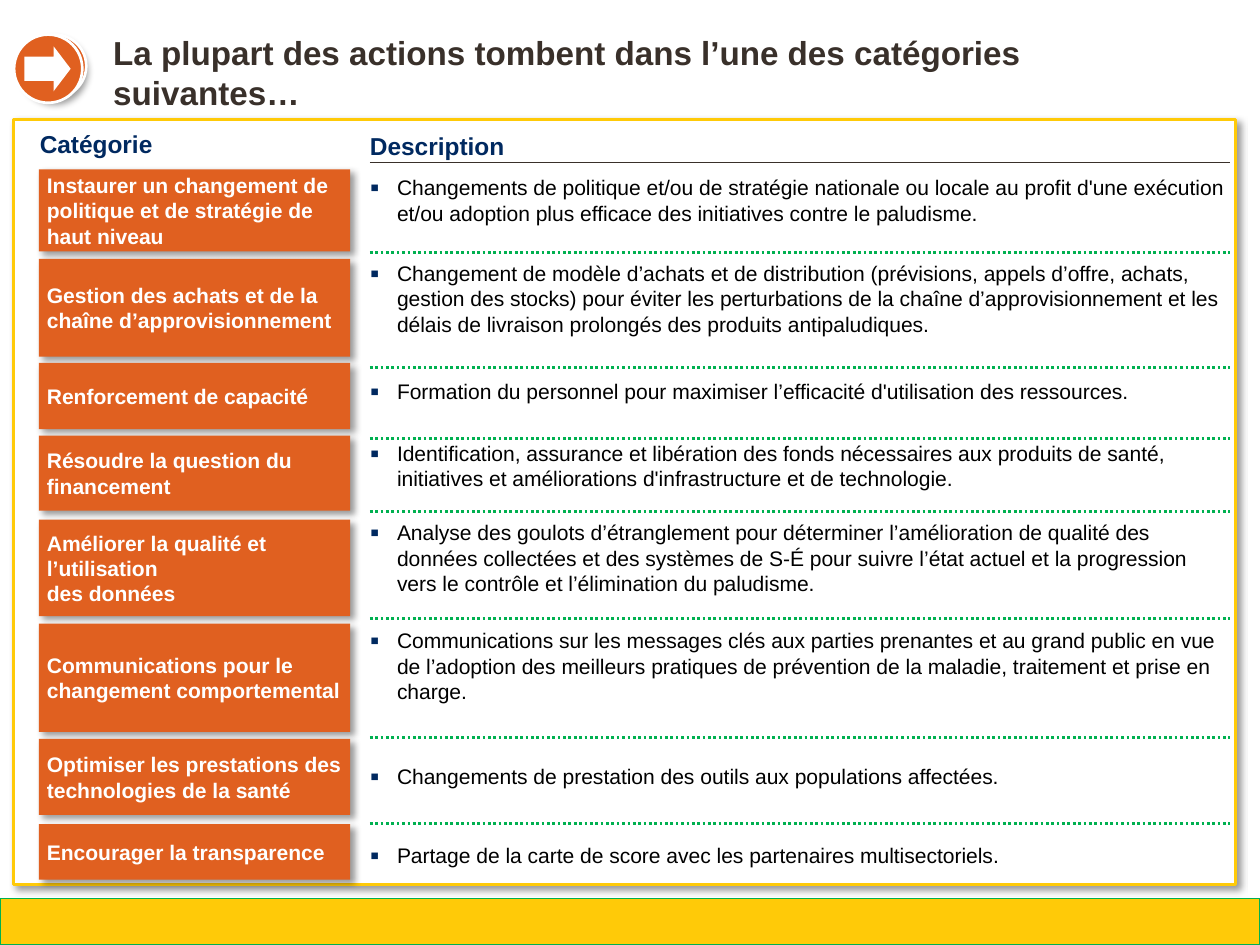
from lxml.etree import SubElement
from pptx import Presentation
from pptx.dml.color import RGBColor
from pptx.enum.dml import MSO_LINE
from pptx.enum.shapes import MSO_CONNECTOR, MSO_SHAPE
from pptx.enum.text import MSO_ANCHOR as Anchor, MSO_AUTO_SIZE as AutoSize, PP_ALIGN
from pptx.oxml.ns import qn
from pptx.util import Pt

ORANGE, YELLOW, GREEN = "E06020", "FFCA08", "00B050"
NAVY, BROWN, WHITE, BLACK = "002960", "39302A", "FFFFFF", "000000"
WIDTH, HEIGHT = 705.6, 529.2
LABEL_LEFT, LABEL_WIDTH = 21.8, 174.4
TEXT_LEFT, TEXT_WIDTH = 207.2, 481.8
BODY_SIZE, HEADING_SIZE, TITLE_SIZE = 11.8, 13.7, 18.6
LINE_RATIO = 1.2

# label, label top, label height, description, description top, rule below
ROWS = [
    ("Instaurer un changement de politique et de stratégie de haut niveau", 94.8, 46,
     "Changements de politique et/ou de stratégie nationale ou locale au profit d'une exécution "
     "et/ou adoption plus efficace des initiatives contre le paludisme.", 97.9, 141.3),
    ("Gestion des achats et de la\vchaîne d’approvisionnement", 145, 54.7,
     "Changement de modèle d’achats et de distribution (prévisions, appels d’offre, achats, "
     "gestion des stocks) pour éviter les perturbations de la chaîne d’approvisionnement et les "
     "délais de livraison prolongés des produits antipaludiques.", 145.8, 205.8),
    ("Renforcement de capacité", 203.2, 37.2,
     "Formation du personnel pour maximiser l’efficacité d'utilisation des ressources.",
     211.9, 245.5),
    ("Résoudre la question du financement", 244, 42,
     "Identification, assurance et libération des fonds nécessaires aux produits de santé, "
     "initiatives et améliorations d'infrastructure et de technologie.", 246.7, 286.4),
    ("Améliorer la qualité et l’utilisation\vdes données", 291, 54,
     "Analyse des goulots d’étranglement pour déterminer l’amélioration de qualité des données "
     "collectées et des systèmes de S-É pour suivre l’état actuel et la progression vers le "
     "contrôle et l’élimination du paludisme.", 291, 346.2),
    ("Communications pour le changement comportemental", 349.2, 60.7,
     "Communications sur les messages clés aux parties prenantes et au grand public en vue de "
     "l’adoption des meilleurs pratiques de prévention de la maladie, traitement et prise en "
     "charge.", 351.5, 413),
    ("Optimiser les prestations des technologies de la santé", 413.8, 42.5,
     "Changements de prestation des outils aux populations affectées.", 427.7, 461),
    ("Encourager la transparence", 461.6, 31,
     "Partage de la carte de score avec les partenaires multisectoriels.", 471.8, None),
]


def color(value):
    return RGBColor.from_string(value)


def set_values(target, values):
    for name, value in values.items():
        setattr(target, name, value)


def write(shape, text, size, text_color, bold=True, anchor=Anchor.TOP, margin=0,
          auto_size=AutoSize.NONE):
    frame = shape.text_frame
    margins = {f"margin_{side}": Pt(margin) for side in ("left", "top", "right", "bottom")}
    set_values(frame, {"word_wrap": True, "auto_size": auto_size,
                       "vertical_anchor": anchor, **margins})
    paragraph = frame.paragraphs[0]
    paragraph.text = text
    set_values(paragraph, {"alignment": PP_ALIGN.LEFT, "space_before": Pt(0),
                           "line_spacing": Pt(size * LINE_RATIO)})
    for run in paragraph.runs:
        set_values(run.font, {"name": "Arial", "size": Pt(size), "bold": bold})
        run.font.color.rgb = color(text_color)
    return paragraph


def add_bullet(paragraph):
    properties = paragraph._p.get_or_add_pPr()
    properties.set("marL", str(Pt(15.1)))
    properties.set("indent", str(Pt(-15.1)))
    bullet_color = SubElement(properties, qn("a:buClr"))
    SubElement(bullet_color, qn("a:srgbClr"), val=NAVY)
    SubElement(properties, qn("a:buSzPct"), val="125000")
    SubElement(properties, qn("a:buFont"), typeface="Arial")
    SubElement(properties, qn("a:buChar"), char="▪")


def add_shadow(shape, angle):
    effects = shape._element.spPr.find(qn("a:effectLst"))
    shadow = SubElement(effects, qn("a:outerShdw"), blurRad=str(Pt(4)), dist=str(Pt(3)),
                        dir=str(angle * 60000), algn="tl", rotWithShape="0")
    shade = SubElement(shadow, qn("a:srgbClr"), val=BLACK)
    SubElement(shade, qn("a:alpha"), val="40000")


def add_box(slide, kind, bounds, fill, line=None, line_width=1.5, shadow_angle=None):
    shape = slide.shapes.add_shape(kind, *map(Pt, bounds))
    shape.fill.solid()
    shape.fill.fore_color.rgb = color(fill)
    if line:
        shape.line.color.rgb = color(line)
        shape.line.width = Pt(line_width)
    else:
        shape.line.fill.background()
    shape.shadow.inherit = False
    if shadow_angle is not None:
        add_shadow(shape, shadow_angle)
    return shape


def add_text(slide, bounds, text, size, text_color, **options):
    box = slide.shapes.add_textbox(*map(Pt, bounds))
    return write(box, text, size, text_color, auto_size=AutoSize.SHAPE_TO_FIT_TEXT, **options)


def add_rule(slide, top, line_color, width, dash=None):
    ends = (TEXT_LEFT, top, TEXT_LEFT + TEXT_WIDTH, top)
    rule = slide.shapes.add_connector(MSO_CONNECTOR.STRAIGHT, *map(Pt, ends))
    rule.line.color.rgb = color(line_color)
    set_values(rule.line, {"width": Pt(width), "dash_style": dash})
    SubElement(rule._element.spPr, qn("a:effectLst"))


def add_title(slide, text):
    title = slide.shapes.title
    bounds = zip(("left", "top", "width", "height"), map(Pt, (63.4, 18, 590.4, 45.4)))
    set_values(title, dict(bounds))
    write(title, text, TITLE_SIZE, BROWN)


def add_arrow_badge(slide):
    add_box(slide, MSO_SHAPE.OVAL, (13, 19.4, 35.3, 35.3), ORANGE, WHITE, shadow_angle=90)
    add_box(slide, MSO_SHAPE.OVAL, (7.9, 19.4, 38.2, 38.2), ORANGE, WHITE)
    arrow = add_box(slide, MSO_SHAPE.RIGHT_ARROW, (13.7, 25.9, 25.9, 25.2), WHITE)
    arrow.adjustments[0] = 0.54
    arrow.adjustments[1] = 0.38


def add_row(slide, label, label_top, label_height, description, text_top, rule_top):
    box = add_box(slide, MSO_SHAPE.RECTANGLE,
                  (LABEL_LEFT, label_top, LABEL_WIDTH, label_height), ORANGE, shadow_angle=45)
    write(box, label, BODY_SIZE, WHITE, anchor=Anchor.MIDDLE, margin=4.5)
    paragraph = add_text(slide, (TEXT_LEFT, text_top, TEXT_WIDTH, 14.2), description,
                         BODY_SIZE, BLACK, bold=False)
    add_bullet(paragraph)
    if rule_top:
        add_rule(slide, rule_top, GREEN, 1.5, MSO_LINE.ROUND_DOT)


def main():
    presentation = Presentation()
    set_values(presentation, {"slide_width": Pt(WIDTH), "slide_height": Pt(HEIGHT)})
    slide = presentation.slides.add_slide(presentation.slide_layouts[5])
    add_title(slide, "La plupart des actions tombent dans l’une des catégories suivantes…")
    add_box(slide, MSO_SHAPE.RECTANGLE, (0, 503, WIDTH, HEIGHT - 503), YELLOW, GREEN, 0.75)
    add_box(slide, MSO_SHAPE.RECTANGLE, (7.6, 66.8, 684.2, 428.4), WHITE, YELLOW,
            shadow_angle=45)
    for text, left, top in (("Catégorie", 22.3, 72.2), ("Description", TEXT_LEFT, 73.6)):
        add_text(slide, (left, top, LABEL_WIDTH, 16.5), text, HEADING_SIZE, NAVY,
                 anchor=Anchor.BOTTOM)
    add_rule(slide, 91.2, BROWN, 0.75)
    for row in ROWS:
        add_row(slide, *row)
    add_arrow_badge(slide)
    presentation.save("out.pptx")


if __name__ == "__main__":
    main()
